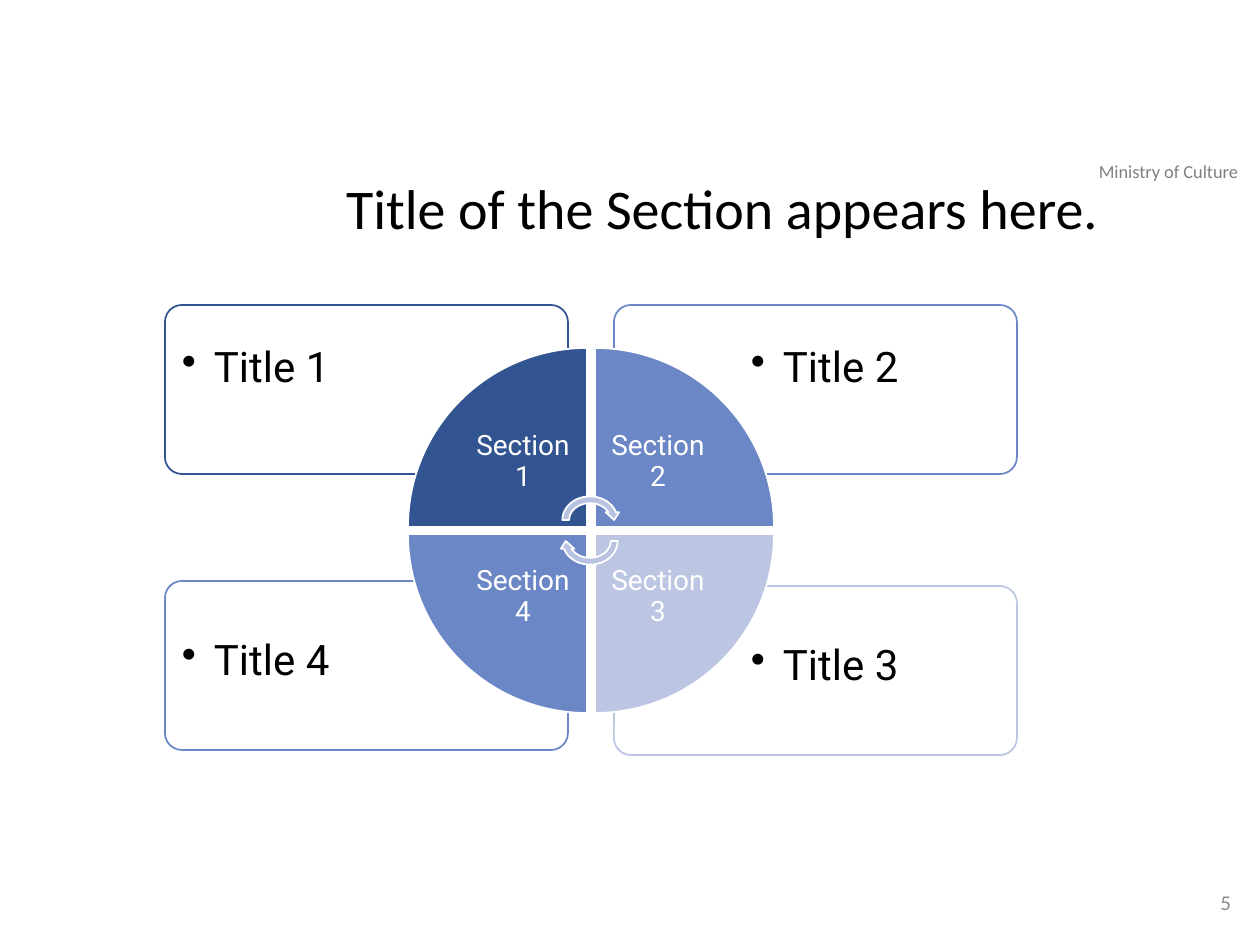
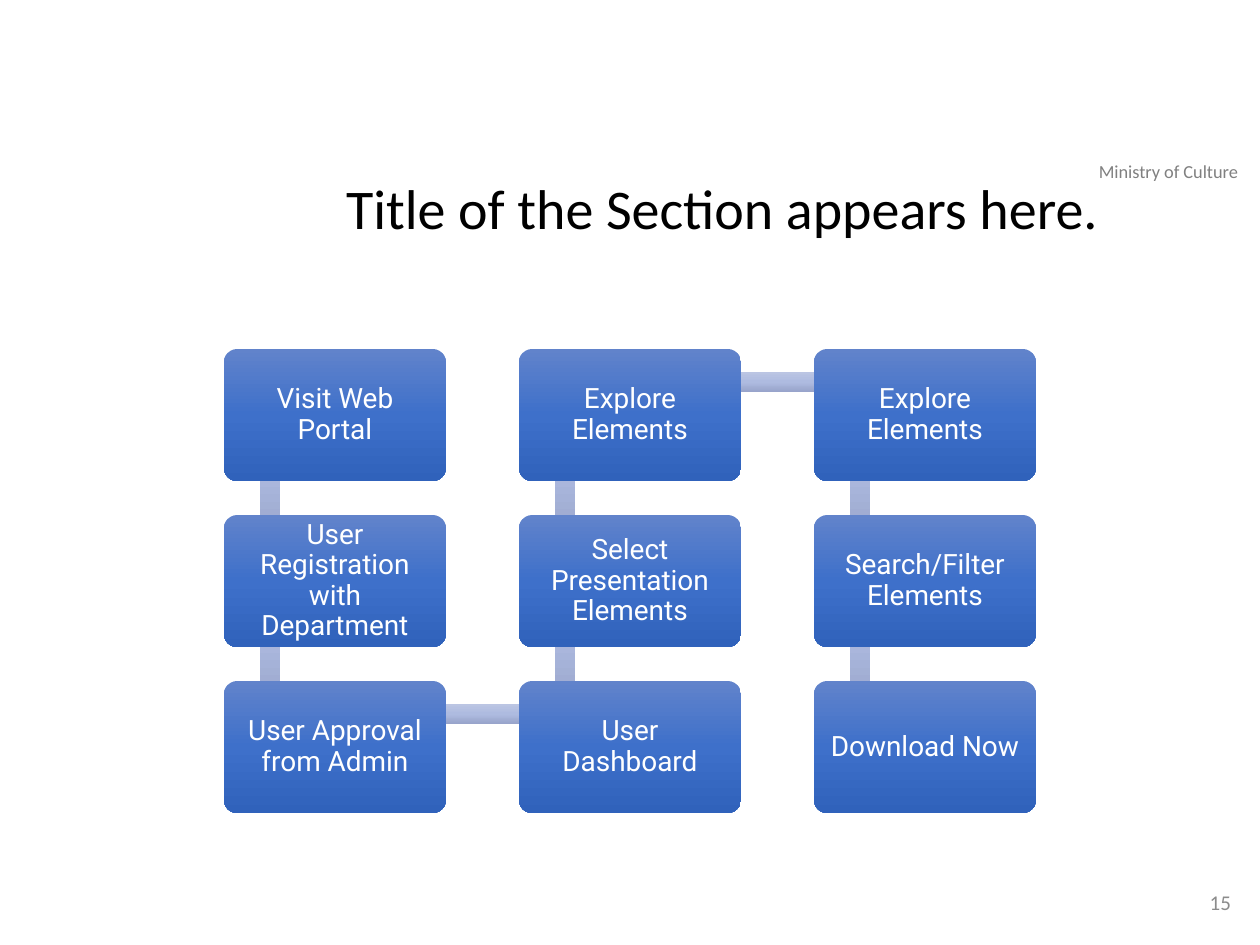
from copy import deepcopy

from lxml import etree
from pptx import Presentation
from pptx.dml.color import RGBColor
from pptx.enum.shapes import MSO_SHAPE
from pptx.enum.text import MSO_ANCHOR, MSO_AUTO_SIZE, PP_ALIGN
from pptx.oxml.ns import qn
from pptx.util import Pt

PX = 7257  # EMU in one px, 126 px to the inch
ROUNDED, RECTANGLE = MSO_SHAPE.ROUNDED_RECTANGLE, MSO_SHAPE.RECTANGLE
WEDGE, ARROW = MSO_SHAPE.PIE_WEDGE, MSO_SHAPE.CIRCULAR_ARROW
TOP, MIDDLE = MSO_ANCHOR.TOP, MSO_ANCHOR.MIDDLE
LEFT, CENTER, RIGHT = PP_ALIGN.LEFT, PP_ALIGN.CENTER, PP_ALIGN.RIGHT
NO_AUTOFIT = MSO_AUTO_SIZE.NONE

WHITE, BLACK = "FFFFFF", "000000"
NAVY, BLUE, PALE, ARROW_BLUE = "325491", "6C87C5", "BCC6E2", "B9C2E1"
HEADER_GRAY, NUMBER_GRAY = "808080", "8C8C8C"
STEP_GRADIENT = ("6183CB", "3E70CA", "3062BB")
BAR_GRADIENT = ("BBC5E3", "AEBBE0", "98A4CB")


def color(hex_value):
    return RGBColor.from_string(hex_value)


def write(box, text, size=16, font="Roboto", ink=WHITE, align=CENTER,
          anchor=MIDDLE, inset=(13, 6), spacing=0.9, bullet=False):
    frame = box.text_frame
    frame.word_wrap = True
    frame.auto_size = NO_AUTOFIT
    frame.vertical_anchor = anchor
    frame.margin_left = frame.margin_right = inset[0] * PX
    frame.margin_top = frame.margin_bottom = inset[1] * PX
    para = frame.paragraphs[0]
    para.alignment = align
    para.line_spacing = spacing
    if bullet:
        properties = para._p.get_or_add_pPr()
        properties.set("marL", str(32 * PX))
        properties.set("indent", str(-32 * PX))
        etree.SubElement(properties, qn("a:buChar"), char="•")
    span = para.add_run()
    span.text = text
    span.font.size = Pt(size)
    span.font.name = font
    span.font.color.rgb = color(ink)


deck = Presentation()
deck.slide_width, deck.slide_height = 1260 * PX, 945 * PX

# Header, title and page number on both slides
pages = []
for number in ("5", "15"):
    page = deck.slides.add_slide(deck.slide_layouts[5])
    pages.append(page)
    header = page.shapes.add_textbox(1031 * PX, 154 * PX, 275 * PX, 35 * PX)
    write(header, "Ministry of Culture", size=10.5, font="Calibri",
          ink=HEADER_GRAY, anchor=TOP, spacing=1)
    title = page.shapes.title
    title.left, title.top = 333 * PX, 175 * PX
    title.width, title.height = 834 * PX, 100 * PX
    write(title, "Title of the Section appears here.", size=32,
          font="Calibri", ink=BLACK, align=LEFT, anchor=TOP)
    page_number = page.shapes.add_textbox(960 * PX, 877 * PX, 284 * PX, 50 * PX)
    write(page_number, number, size=12, font="Calibri", ink=NUMBER_GRAY,
          align=RIGHT, spacing=1)
cycle_page, process_page = pages

# Cycle: number, column, row, colour, top of the title box
quadrants = [(1, 0, 0, NAVY, 305), (2, 1, 0, BLUE, 305),
             (3, 1, 1, PALE, 586), (4, 0, 1, BLUE, 581)]
boxes = [(ROUNDED, 165 + 449 * column, top, 403, 169, 0, WHITE, tone)
         for _, column, _, tone, top in quadrants]
wedges = [(WEDGE, 408 + 187 * column, 348 + 186 * row, 179, 179,
           90 * (number - 1), tone, WHITE)
          for number, column, row, tone, _ in quadrants]
arrows = [(ARROW, 559, 493 + 21 * turn, 62, 54, 180 * turn, ARROW_BLUE, WHITE)
          for turn in (0, 1)]
for kind, x, y, width, height, angle, fill, line in boxes + wedges + arrows:
    shape = cycle_page.shapes.add_shape(kind, x * PX, y * PX, width * PX, height * PX)
    shape.shadow.inherit = False
    shape.rotation = angle
    shape.fill.solid()
    shape.fill.fore_color.rgb = color(fill)
    shape.line.color.rgb = color(line)
    shape.line.width = Pt(1)
    if kind == ROUNDED:
        shape.adjustments[0] = 0.1

# Titles and section labels of the cycle
for number, column, row, _, top in quadrants:
    label = cycle_page.shapes.add_textbox(
        (169 + 569 * column) * PX, (top + (45 if row else 4)) * PX, 275 * PX, 120 * PX)
    write(label, f"Title {number}", size=24, ink=BLACK, align=LEFT,
          anchor=TOP if row else MIDDLE, inset=(13, 13), bullet=True)
    section = cycle_page.shapes.add_textbox(
        (460 + 135 * column) * PX, (399 + 135 * row) * PX, 126 * PX, 126 * PX)
    write(section, f"Section {number}", inset=(14, 14))

# Process: steps by column, top to bottom
columns = [
    ("Visit Web Portal", "User Registration with Department",
     "User Approval from Admin"),
    ("Explore Elements", "Select Presentation Elements", "User Dashboard"),
    ("Explore Elements", "Search/Filter Elements", "Download Now"),
]
STEP_LEFT, STEP_TOP, COLUMN_PITCH, ROW_PITCH = 224, 349, 295, 166
bars, steps = [], []
for column, texts in enumerate(columns):
    x = STEP_LEFT + COLUMN_PITCH * column
    for row, text in enumerate(texts):
        y = STEP_TOP + ROW_PITCH * row
        steps.append((ROUNDED, x, y, 222, 132, STEP_GRADIENT, text))
        if row < 2:
            bars.append((RECTANGLE, x + 36, y + 33, 20, 165, BAR_GRADIENT, ""))
# The path turns at the bottom of column 1 and at the top of column 2
for column, row in ((0, 2), (1, 0)):
    bars.append((RECTANGLE, STEP_LEFT + COLUMN_PITCH * column + 46,
                 STEP_TOP + ROW_PITCH * row + 23, 294, 20, BAR_GRADIENT, ""))

for kind, x, y, width, height, gradient, text in bars + steps:
    shape = process_page.shapes.add_shape(kind, x * PX, y * PX, width * PX, height * PX)
    shape.shadow.inherit = False
    shape.line.fill.background()
    shape.fill.gradient()
    shape.fill.gradient_angle = 270
    stop_list = shape._element.spPr.find(".//" + qn("a:gsLst"))
    stop_list.insert(1, deepcopy(stop_list[0]))
    for stop, position, tone in zip(shape.fill.gradient_stops, (0, 0.5, 1), gradient):
        stop.position = position
        stop.color.rgb = color(tone)
    if text:
        shape.adjustments[0] = 0.1
        write(shape, text, inset=(13, 13))

deck.save("out.pptx")
